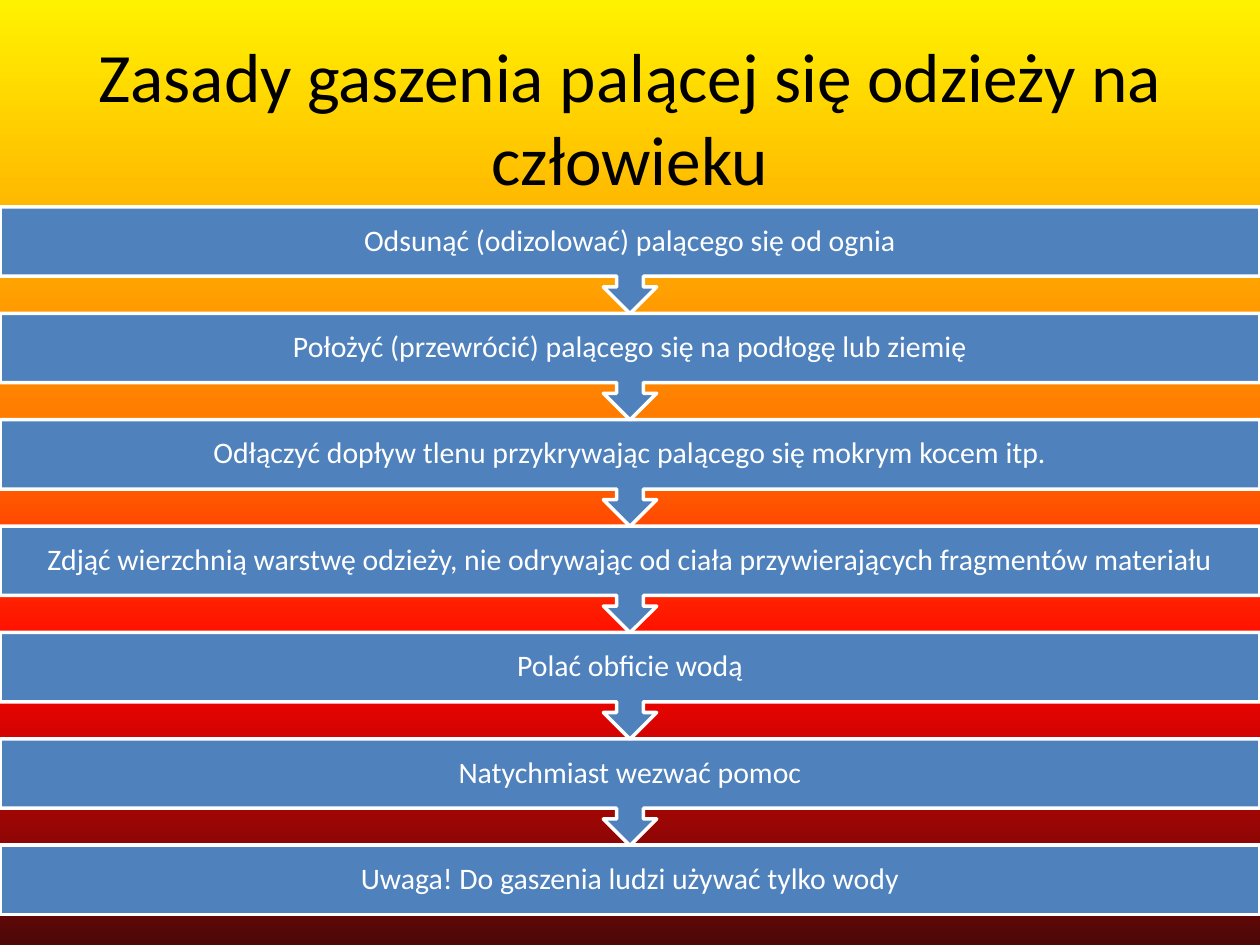
from copy import deepcopy

from pptx import Presentation, util as u
from pptx.dml.color import RGBColor
from pptx.enum import shapes, text

BLACK = RGBColor(0x00, 0x00, 0x00)
WHITE = RGBColor(0xFF, 0xFF, 0xFF)
BLUE = RGBColor(0x4F, 0x81, 0xBD)
FLAMES = [
    (0, RGBColor(0xFF, 0xF2, 0x00)),
    (0.45, RGBColor(0xFF, 0x7A, 0x00)),
    (0.7, RGBColor(0xFF, 0x03, 0x00)),
    (1, RGBColor(0x4D, 0x08, 0x08)),
]

STEPS = [
    "Odsunąć (odizolować) palącego się od ognia",
    "Położyć (przewrócić) palącego się na podłogę lub ziemię",
    "Odłączyć dopływ tlenu przykrywając palącego się mokrym kocem itp.",
    "Zdjąć wierzchnią warstwę odzieży, nie odrywając od ciała "
    "przywierających fragmentów materiału",
    "Polać obficie wodą",
    "Natychmiast wezwać pomoc",
    "Uwaga! Do gaszenia ludzi używać tylko wody",
]

prs = Presentation()
prs.slide_width, prs.slide_height = u.Cm(25.4), u.Cm(19.05)
slide = prs.slides.add_slide(prs.slide_layouts[6])


def add_label(wording, left, top, width, height, size, color, inset, spacing):
    box = slide.shapes.add_textbox(left, top, width, height)
    frame = box.text_frame
    frame_format = {
        "word_wrap": True,
        "vertical_anchor": text.MSO_ANCHOR.MIDDLE,
        "margin_left": inset,
        "margin_right": inset,
        "margin_top": inset,
        "margin_bottom": inset,
    }
    for name, value in frame_format.items():
        setattr(frame, name, value)
    line = frame.paragraphs[0]
    line.text = wording
    line.alignment = text.PP_ALIGN.CENTER
    line.line_spacing = spacing
    for name, value in {"name": "Calibri", "size": u.Pt(size)}.items():
        setattr(line.runs[0].font, name, value)
    line.runs[0].font.color.rgb = color


# Background: flames from yellow at the top to dark red at the bottom
backdrop = slide.background.fill
backdrop.gradient()
backdrop.gradient_angle = 270
stop_list = slide.element.xpath(".//a:gsLst")[0]
for _ in range(len(FLAMES) - len(stop_list)):
    stop_list.append(deepcopy(stop_list[0]))
for stop, (position, color) in zip(backdrop.gradient_stops, FLAMES):
    stop.position = position
    stop.color.rgb = color

# Title
add_label("Zasady gaszenia palącej się odzieży na człowieku",
          u.Cm(1.27), u.Cm(0.76), u.Cm(22.86), u.Cm(3.18),
          39.6, BLACK, u.Cm(0.2), 1.0)

# Steps: stacked from the last one up, so each arrow lies over the next bar
first_top, last_top = u.Cm(4.17), u.Cm(17.04)
pitch = (last_top - first_top) // (len(STEPS) - 1)
bar_height = u.Cm(1.4)

for number, step in reversed(list(enumerate(STEPS))):
    top = first_top + number * pitch
    is_last = number == len(STEPS) - 1
    kind = (shapes.MSO_SHAPE.RECTANGLE if is_last
            else shapes.MSO_SHAPE.UP_ARROW_CALLOUT)
    bar = slide.shapes.add_shape(kind, 0, top, prs.slide_width,
                                 bar_height if is_last else u.Cm(2.15))
    bar.rotation = 0 if is_last else 180
    bar.shadow.inherit = False
    bar.fill.solid()
    bar.fill.fore_color.rgb = BLUE
    bar.line.color.rgb = WHITE
    bar.line.width = u.Pt(2)
    # The wording stands apart because the callout is upside down
    add_label(step, 0, top, prs.slide_width, bar_height,
              17, WHITE, u.Cm(0.33), 0.9)

prs.save("out.pptx")
